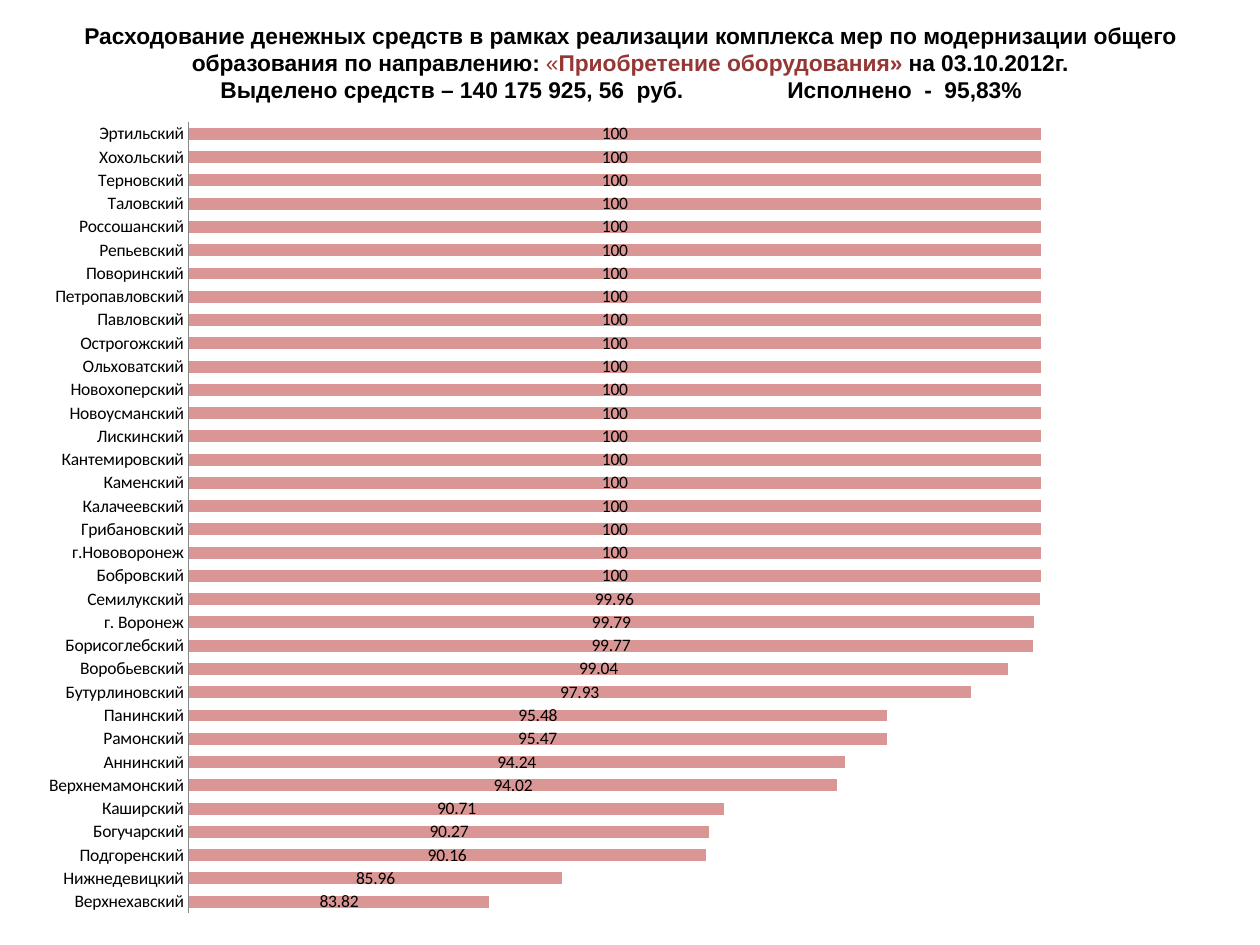
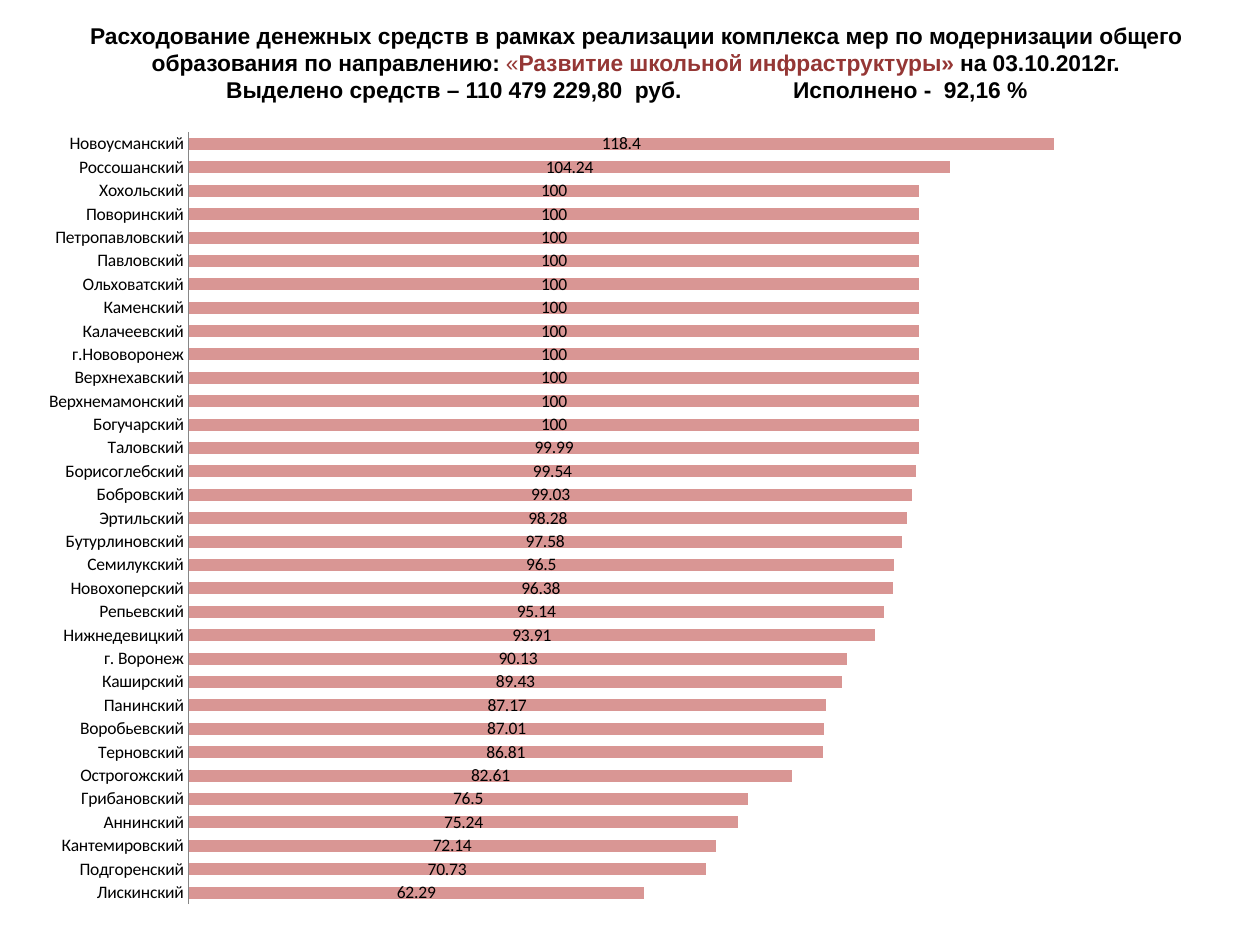
import pptx
import pptx.chart.data
import pptx.dml.color
import pptx.enum.chart
import pptx.enum.text
import pptx.util
from lxml import etree

BLACK = pptx.dml.color.RGBColor(0x00, 0x00, 0x00)
MAROON = pptx.dml.color.RGBColor(0x95, 0x37, 0x35)
ROSE = pptx.dml.color.RGBColor(0xD9, 0x96, 0x94)
GREY = pptx.dml.color.RGBColor(0x86, 0x86, 0x86)

SLIDE_W, SLIDE_H = pptx.util.Inches(10), pptx.util.Inches(7.5)
TITLE_FONT = {"name": "Arial", "size": pptx.util.Pt(13), "bold": True}
CHART_FONT = {"name": "Calibri", "size": pptx.util.Pt(10), "bold": False}
PLOT_AREA = {"x": 0.135, "y": 0.02, "w": 0.845, "h": 0.96}  # shares of the chart

TITLE_START = ("Расходование денежных средств в рамках реализации комплекса мер "
               "по модернизации общего образования по направлению: ")
TITLE_DATE = "на 03.10.2012г."

# Boxes are left, top, width, height as shares of the slide.
SLIDES = [
    {
        "direction": "Приобретение оборудования» ",
        "totals": "Выделено средств – 140 175 925, 56  руб. \t\tИсполнено  -  95,83%\t",
        "title_box": (0.012, 0, 0.976, 0.132),
        "chart_box": (0.02, 0.112, 0.961, 0.872),
        "scale": (75, 105),
        "districts": [
            "Верхнехавский", "Нижнедевицкий", "Подгоренский", "Богучарский",
            "Каширский", "Верхнемамонский", "Аннинский", "Рамонский", "Панинский",
            "Бутурлиновский", "Воробьевский", "Борисоглебский", "г. Воронеж",
            "Семилукский", "Бобровский", "г.Нововоронеж", "Грибановский",
            "Калачеевский", "Каменский", "Кантемировский", "Лискинский",
            "Новоусманский", "Новохоперский", "Ольховатский", "Острогожский",
            "Павловский", "Петропавловский", "Поворинский", "Репьевский",
            "Россошанский", "Таловский", "Терновский", "Хохольский", "Эртильский"],
        "percents": [83.82, 85.96, 90.16, 90.27, 90.71, 94.02, 94.24, 95.47, 95.48,
                     97.93, 99.04, 99.77, 99.79, 99.96] + [100] * 20,
    },
    {
        "direction": "Развитие школьной инфраструктуры» ",
        "totals": "Выделено средств – 110 479 229,80  руб.\t\tИсполнено -  92,16 %\t",
        "title_box": (0.02, 0, 0.969, 0.132),
        "chart_box": (0.02, 0.123, 0.961, 0.851),
        "scale": (0, 140),
        "districts": [
            "Лискинский", "Подгоренский", "Кантемировский", "Аннинский",
            "Грибановский", "Острогожский", "Терновский", "Воробьевский",
            "Панинский", "Каширский", "г. Воронеж", "Нижнедевицкий", "Репьевский",
            "Новохоперский", "Семилукский", "Бутурлиновский", "Эртильский",
            "Бобровский", "Борисоглебский", "Таловский", "Богучарский",
            "Верхнемамонский", "Верхнехавский", "г.Нововоронеж", "Калачеевский",
            "Каменский", "Ольховатский", "Павловский", "Петропавловский",
            "Поворинский", "Хохольский", "Россошанский", "Новоусманский"],
        "percents": [62.29, 70.73, 72.14, 75.24, 76.5, 82.61, 86.81, 87.01, 87.17,
                     89.43, 90.13, 93.91, 95.14, 96.38, 96.5, 97.58, 98.28, 99.03,
                     99.54, 99.99] + [100] * 11 + [104.24, 118.4],
    },
]


def to_emu(box):
    return [round(share * side) for share, side in zip(box, (SLIDE_W, SLIDE_H) * 2)]


def set_font(font, style, color):
    for name, value in style.items():
        setattr(font, name, value)
    font.color.rgb = color


def add_title(s, box, direction, totals):
    tf = s.shapes.add_textbox(*to_emu(box)).text_frame
    tf.word_wrap = True
    tf.vertical_anchor = pptx.enum.text.MSO_ANCHOR.MIDDLE
    heading = [(TITLE_START, BLACK, True), ("«", MAROON, False),
               (direction, MAROON, True), (TITLE_DATE, BLACK, True)]
    for p, runs in ((tf.paragraphs[0], heading),
                    (tf.add_paragraph(), [(totals, BLACK, True)])):
        p.alignment = pptx.enum.text.PP_ALIGN.CENTER
        for text, color, bold in runs:
            r = p.add_run()
            r.text = text
            set_font(r.font, {**TITLE_FONT, "bold": bold}, color)


def fix_plot_area(chart):
    """Give the inner plot area its fixed place within the chart."""
    plot_area = chart.plots[0]._element.getparent()
    ns = "{%s}" % etree.QName(plot_area).namespace
    for old in plot_area.findall(ns + "layout"):
        plot_area.remove(old)
    layout = etree.Element(ns + "layout")
    plot_area.insert(0, layout)
    manual = etree.SubElement(layout, ns + "manualLayout")
    settings = {"layoutTarget": "inner", "xMode": "edge", "yMode": "edge", **PLOT_AREA}
    for tag, value in settings.items():
        etree.SubElement(manual, ns + tag).set("val", str(value))


def add_district_chart(s, box, districts, percents, scale):
    data = pptx.chart.data.CategoryChartData()
    data.categories = districts
    data.add_series("Series 1", percents)
    chart = s.shapes.add_chart(pptx.enum.chart.XL_CHART_TYPE.BAR_STACKED,
                               *to_emu(box), data).chart
    chart.has_legend = chart.has_title = False
    set_font(chart.font, CHART_FONT, BLACK)

    districts_axis, percent_axis = chart.category_axis, chart.value_axis
    districts_axis.major_tick_mark = pptx.enum.chart.XL_TICK_MARK.NONE
    districts_axis.format.line.color.rgb = GREY
    percent_axis.minimum_scale, percent_axis.maximum_scale = scale
    percent_axis.has_major_gridlines = False
    percent_axis.visible = False

    plot = chart.plots[0]
    plot.gap_width, plot.overlap = 95, 100
    plot.vary_by_categories = False
    fill = plot.series[0].format.fill
    fill.solid()
    fill.fore_color.rgb = ROSE
    plot.has_data_labels = True
    plot.data_labels.show_value = True
    plot.data_labels.position = pptx.enum.chart.XL_LABEL_POSITION.CENTER
    set_font(plot.data_labels.font, CHART_FONT, BLACK)
    fix_plot_area(chart)


def add_spending_slide(prs, content):
    s = prs.slides.add_slide(prs.slide_layouts[6])
    add_title(s, content["title_box"], content["direction"], content["totals"])
    add_district_chart(s, content["chart_box"], content["districts"],
                       content["percents"], content["scale"])


def main():
    prs = pptx.Presentation()
    prs.slide_width, prs.slide_height = SLIDE_W, SLIDE_H
    for content in SLIDES:
        add_spending_slide(prs, content)
    prs.save("out.pptx")


if __name__ == "__main__":
    main()
